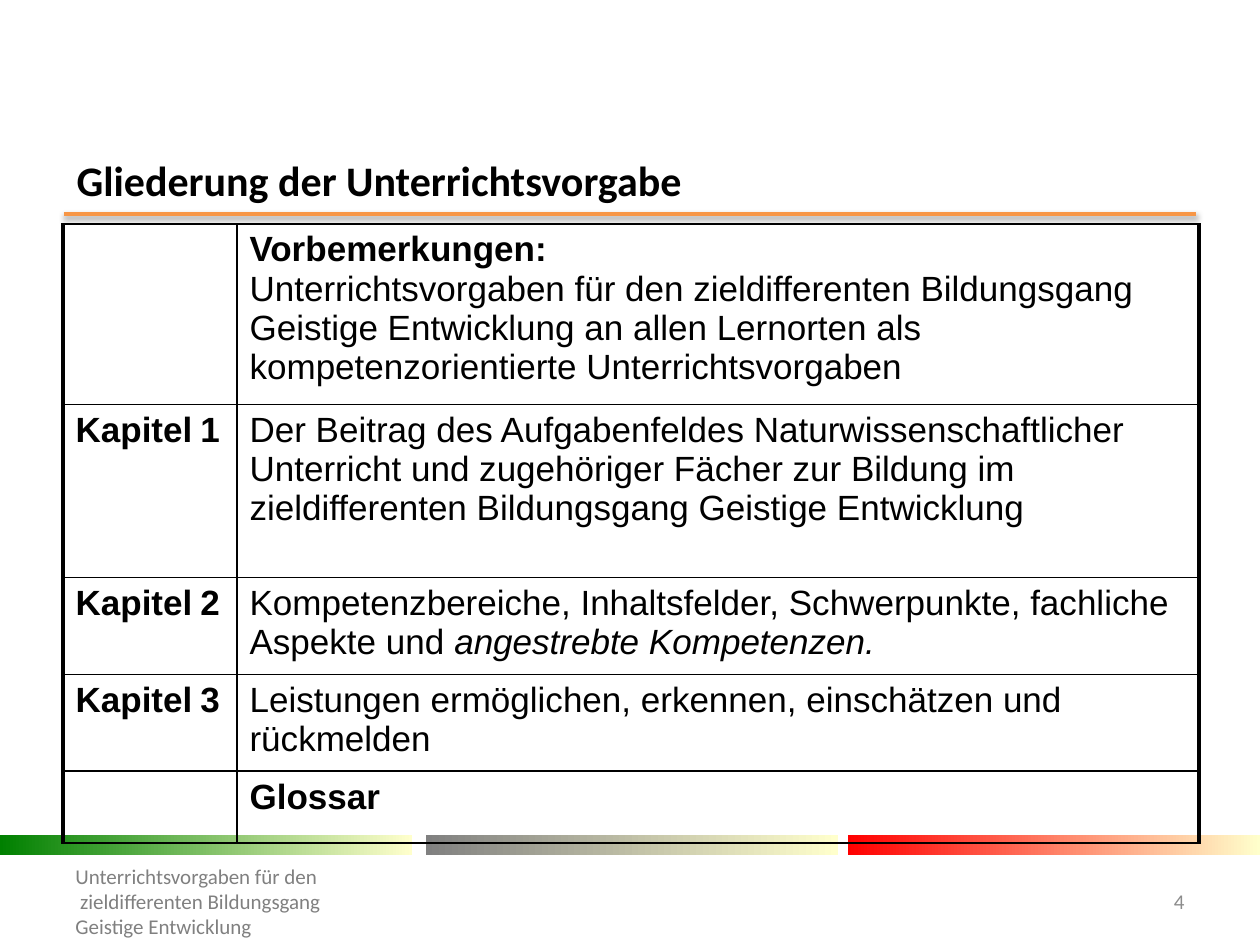
from lxml import etree
from pptx import Presentation, util as u
from pptx.dml.color import RGBColor
from pptx.enum import shapes, text
from pptx.oxml import parse_xml
from pptx.oxml.ns import nsdecls, qn

PX = 914400 // 126

BLACK = RGBColor(0x00, 0x00, 0x00)
GREY = RGBColor(0x80, 0x80, 0x80)
LIGHT_GREY = RGBColor(0x8C, 0x8C, 0x8C)
ORANGE = RGBColor(0xF7, 0x96, 0x46)
GREEN = RGBColor(0x00, 0x80, 0x00)
RED = RGBColor(0xFF, 0x00, 0x00)
CREAM = RGBColor(0xFF, 0xFF, 0xCC)

BOLD, ITALIC, SMALL = {"bold": True}, {"italic": True}, {"bold": True, "size": 16}

COLUMN_WIDTHS = [174, 962]
ROW_HEIGHTS = [174, 173, 93, 94, 72]
CHAPTERS = [
    ("", [("Vorbemerkungen: ", BOLD), ("\n", {}),
          ("Unterrichtsvorgaben für den zieldifferenten Bildungsgang Geistige Entwicklung "
           "an allen Lernorten als kompetenzorientierte Unterrichtsvorgaben", {})]),
    ("1", [("Der Beitrag des Aufgabenfeldes Naturwissenschaftlicher Unterricht und "
            "zugehöriger Fächer zur Bildung im zieldifferenten Bildungsgang "
            "Geistige Entwicklung", {})]),
    ("2", [("Kompetenzbereiche, Inhaltsfelder, Schwerpunkte, fachliche Aspekte und ", {}),
           ("angestrebte Kompetenzen.", ITALIC)]),
    ("3", [("Leistungen ermöglichen, erkennen, einschätzen und rückmelden", {})]),
    ("", [("Glossar", BOLD)]),
]


def px(*lengths):
    return [u.Emu(length * PX) for length in lengths]


def write_text(frame, paragraphs, font="Calibri", size=12, color=BLACK, bold=False,
               align=text.PP_ALIGN.LEFT):
    """Fill a frame with paragraphs, each a list of (words, own format) runs."""
    frame.word_wrap = True
    for index, runs in enumerate(paragraphs):
        paragraph = frame.paragraphs[0] if index == 0 else frame.add_paragraph()
        paragraph.alignment = align
        for words, own in runs:
            if words == "\n":
                paragraph.add_line_break()
                continue
            run = paragraph.add_run()
            run.text = words
            run.font.name = font
            run.font.size = u.Pt(own.get("size", size))
            run.font.color.rgb = color
            run.font.bold = own.get("bold", bold)
            run.font.italic = own.get("italic", False)


def add_title(slide, words):
    title = slide.shapes.title
    title.left, title.top, title.width, title.height = px(64, 155, 1134, 49)
    title.text_frame.vertical_anchor = text.MSO_ANCHOR.MIDDLE
    title.text_frame.auto_size = text.MSO_AUTO_SIZE.NONE
    write_text(title.text_frame, [[(words, {})]], size=24, bold=True)


def add_rule(slide):
    rule = slide.shapes.add_connector(shapes.MSO_CONNECTOR.STRAIGHT, *px(64, 214, 1196, 214))
    rule.line.color.rgb = ORANGE
    rule.line.width = u.Pt(2)
    rule._element.spPr.append(parse_xml(
        f'<a:effectLst {nsdecls("a")}>'
        f'<a:outerShdw blurRad="{u.Pt(3.1)}" dist="{u.Pt(1.6)}" dir="5400000" rotWithShape="0">'
        '<a:srgbClr val="000000"><a:alpha val="38000"/></a:srgbClr>'
        '</a:outerShdw></a:effectLst>'))


def add_gradient_bar(slide, left, color):
    bar = slide.shapes.add_shape(shapes.MSO_SHAPE.RECTANGLE, *px(left, 835, 412, 20))
    bar.shadow.inherit = False
    bar.line.fill.background()
    bar.fill.gradient()
    bar.fill.gradient_angle = 0
    for stop, stop_color, position in zip(bar.fill.gradient_stops, (color, CREAM), (0, 1)):
        stop.color.rgb = stop_color
        stop.position = position


def add_footer(slide, left, width, lines, **text_format):
    box = slide.shapes.add_textbox(*px(left, 876, width, 50))
    box.text_frame.vertical_anchor = text.MSO_ANCHOR.MIDDLE
    write_text(box.text_frame, [[(line, {})] for line in lines], **text_format)


def set_borders(cell, **widths):
    properties = cell._tc.get_or_add_tcPr()
    for side in "LRTB":
        line = etree.SubElement(properties, qn(f"a:ln{side}"), w=str(u.Pt(widths.get(side, 1))))
        fill = etree.SubElement(line, qn("a:solidFill"))
        etree.SubElement(fill, qn("a:srgbClr"), val=str(BLACK))


def add_chapter_table(slide):
    frame = slide.shapes.add_table(len(CHAPTERS), 2, *px(63, 224, sum(COLUMN_WIDTHS),
                                                         sum(ROW_HEIGHTS)))
    table = frame.table
    table.first_row = table.horz_banding = False
    for column, width in zip(table.columns, px(*COLUMN_WIDTHS)):
        column.width = width
    for row, height, (number, topic) in zip(table.rows, px(*ROW_HEIGHTS), CHAPTERS):
        row.height = height
        chapter = [("Kapitel", BOLD), (" ", SMALL), (number, BOLD)] if number else []
        for cell, runs, outer_side in zip(row.cells, (chapter, topic), "LR"):
            write_text(cell.text_frame, [runs], font="Arial", size=20)
            set_borders(cell, **{outer_side: 2.25})
            cell.fill.background()


def main():
    presentation = Presentation()
    presentation.slide_width, presentation.slide_height = px(1260, 945)
    slide = presentation.slides.add_slide(presentation.slide_layouts.get_by_name("Title Only"))
    add_rule(slide)
    for left, color in zip((0, 426, 848), (GREEN, GREY, RED)):
        add_gradient_bar(slide, left, color)
    add_title(slide, "Gliederung der Unterrichtsvorgabe")
    add_footer(slide, 63, 726, ["Unterrichtsvorgaben für den", " zieldifferenten Bildungsgang",
                                "Geistige Entwicklung"], color=GREY)
    add_footer(slide, 1116, 81, ["4"], color=LIGHT_GREY, align=text.PP_ALIGN.RIGHT)
    add_chapter_table(slide)
    presentation.save("out.pptx")


if __name__ == "__main__":
    main()
